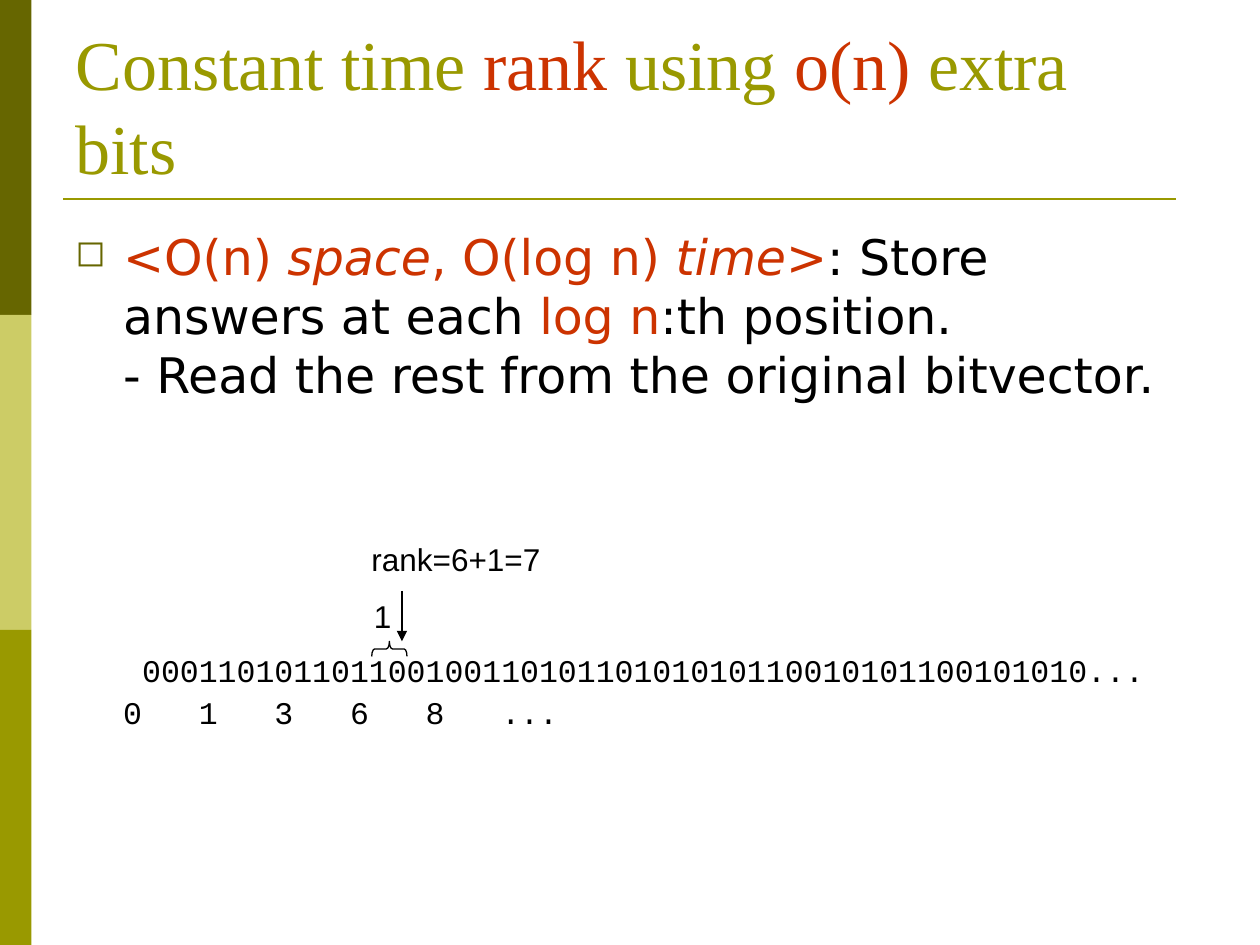
import pptx
import pptx.util
import pptx.dml.color
import pptx.enum.shapes
import pptx.enum.text
import lxml.etree
import pptx.oxml.ns

Inches, Pt = pptx.util.Inches, pptx.util.Pt
RGB = pptx.dml.color.RGBColor
SHAPE = pptx.enum.shapes.MSO_SHAPE
ANCHOR = pptx.enum.text.MSO_ANCHOR
qn = pptx.oxml.ns.qn

DARK = RGB(0x66, 0x66, 0x00)
PALE = RGB(0xCC, 0xCC, 0x66)
OLIVE = RGB(0x99, 0x99, 0x00)
RED = RGB(0xCC, 0x33, 0x00)
BLACK = RGB(0, 0, 0)

# Runs: text, colour, italic
TITLE = [
    ("Constant time ", OLIVE, False),
    ("rank", RED, False),
    (" using ", OLIVE, False),
    ("o(n)", RED, False),
    (" extra bits", OLIVE, False),
]
BODY = [
    [
        ("<O(n) ", RED, False),
        ("space", RED, True),
        (", O(log n) ", RED, False),
        ("time", RED, True),
        (">", RED, False),
        (": Store answers at each ", BLACK, False),
        ("log n", RED, False),
        (":th position. ", BLACK, False),
    ],
    [("- Read the rest from the original bitvector.", BLACK, False)],
]
BITS = " 00011010110110010011010110101010110010101100101010..."
RANKS = ["0", "1", "3", "6", "8", "..."]
# Labels: box, font, lines, space before
LABELS = [
    ((0.88, 5.12, 8.36, 0.7), "Courier New", [BITS, "   ".join(RANKS)], 2),
    ((2.85, 4.24, 1.54, 0.4), "Arial", ["rank=6+1=7"], 0),
    ((2.87, 4.69, 0.34, 0.4), "Arial", ["1"], 0),
]


def place(shape, *box):
    shape.left, shape.top, shape.width, shape.height = map(Inches, box)


def add_runs(para, runs):
    for text, color, slant in runs:
        run = para.add_run()
        run.text = text
        run.font.color.rgb = color
        run.font.italic = slant


def set_font(para, name, size):
    para.font.name = name
    para.font.size = Pt(size)


def add_line(slide, start, end, color, width):
    line = slide.shapes.add_connector(
        pptx.enum.shapes.MSO_CONNECTOR.STRAIGHT,
        *map(Inches, start + end))
    line.line.color.rgb = color
    line.line.width = Pt(width)
    lxml.etree.SubElement(line._element.spPr, qn("a:effectLst"))
    return line


def add_bullet(para, color, size, char):
    props = para._p.get_or_add_pPr()
    props.set("marL", str(Inches(0.38)))
    props.set("indent", str(-Inches(0.38)))
    tint = lxml.etree.SubElement(props, qn("a:buClr"))
    lxml.etree.SubElement(tint, qn("a:srgbClr"), val=str(color))
    lxml.etree.SubElement(props, qn("a:buSzPct"), val=str(size * 1000))
    lxml.etree.SubElement(props, qn("a:buChar"), char=char)


def add_frame(slide):
    for i, color in enumerate((DARK, PALE, OLIVE)):
        band = slide.shapes.add_shape(
            SHAPE.RECTANGLE, 0, Inches(2.5 * i), Inches(0.25), Inches(2.5))
        band.shadow.inherit = False
        band.fill.solid()
        band.fill.fore_color.rgb = color
        band.line.fill.background()
    add_line(slide, (0.5, 1.58), (9.33, 1.58), OLIVE, 1.5)


def add_text(slide):
    title = slide.shapes.title
    place(title, 0.5, 0.3, 9, 1.25)
    frame = title.text_frame
    frame.word_wrap = True
    frame.auto_size = pptx.enum.text.MSO_AUTO_SIZE.NONE
    frame.vertical_anchor = ANCHOR.BOTTOM
    para = frame.paragraphs[0]
    para.alignment = pptx.enum.text.PP_ALIGN.LEFT
    set_font(para, "Times New Roman", 40)
    add_runs(para, TITLE)

    body = slide.shapes.add_textbox(0, 0, 0, 0)
    place(body, 0.5, 1.75, 9, 4.95)
    body.text_frame.word_wrap = True
    para = body.text_frame.paragraphs[0]
    para.space_before = Pt(5.6)
    add_bullet(para, DARK, 75, "◻")
    set_font(para, "DejaVu Sans", 28)
    for i, runs in enumerate(BODY):
        if i:
            para.add_line_break()
        add_runs(para, runs)


def add_diagram(slide):
    for box, font, lines, gap in LABELS:
        label = slide.shapes.add_textbox(0, 0, 0, 0)
        place(label, *box)
        frame = label.text_frame
        frame.word_wrap = False
        for i, text in enumerate(lines):
            para = frame.add_paragraph() if i else frame.paragraphs[0]
            para.space_before = Pt(gap)
            set_font(para, font, 18)
            add_runs(para, [(text, BLACK, False)])

    arrow = add_line(slide, (3.19, 4.69), (3.19, 5.09), BLACK, 0.75)
    lxml.etree.SubElement(
        arrow.line._get_or_add_ln(), qn("a:tailEnd"), type="triangle")

    brace = slide.shapes.add_shape(SHAPE.LEFT_BRACE, 0, 0, 0, 0)
    place(brace, 3.03, 5.01, 0.12, 0.28)
    brace.rotation = 90
    brace.adjustments[0] = 0.195
    brace.shadow.inherit = False
    brace.fill.background()
    brace.line.color.rgb = BLACK
    brace.line.width = Pt(0.75)


def main():
    deck = pptx.Presentation()
    deck.slide_width, deck.slide_height = Inches(10), Inches(7.5)
    slide = deck.slides.add_slide(deck.slide_layouts.get_by_name("Title Only"))
    add_frame(slide)
    add_text(slide)
    add_diagram(slide)
    deck.save("out.pptx")


if __name__ == "__main__":
    main()
